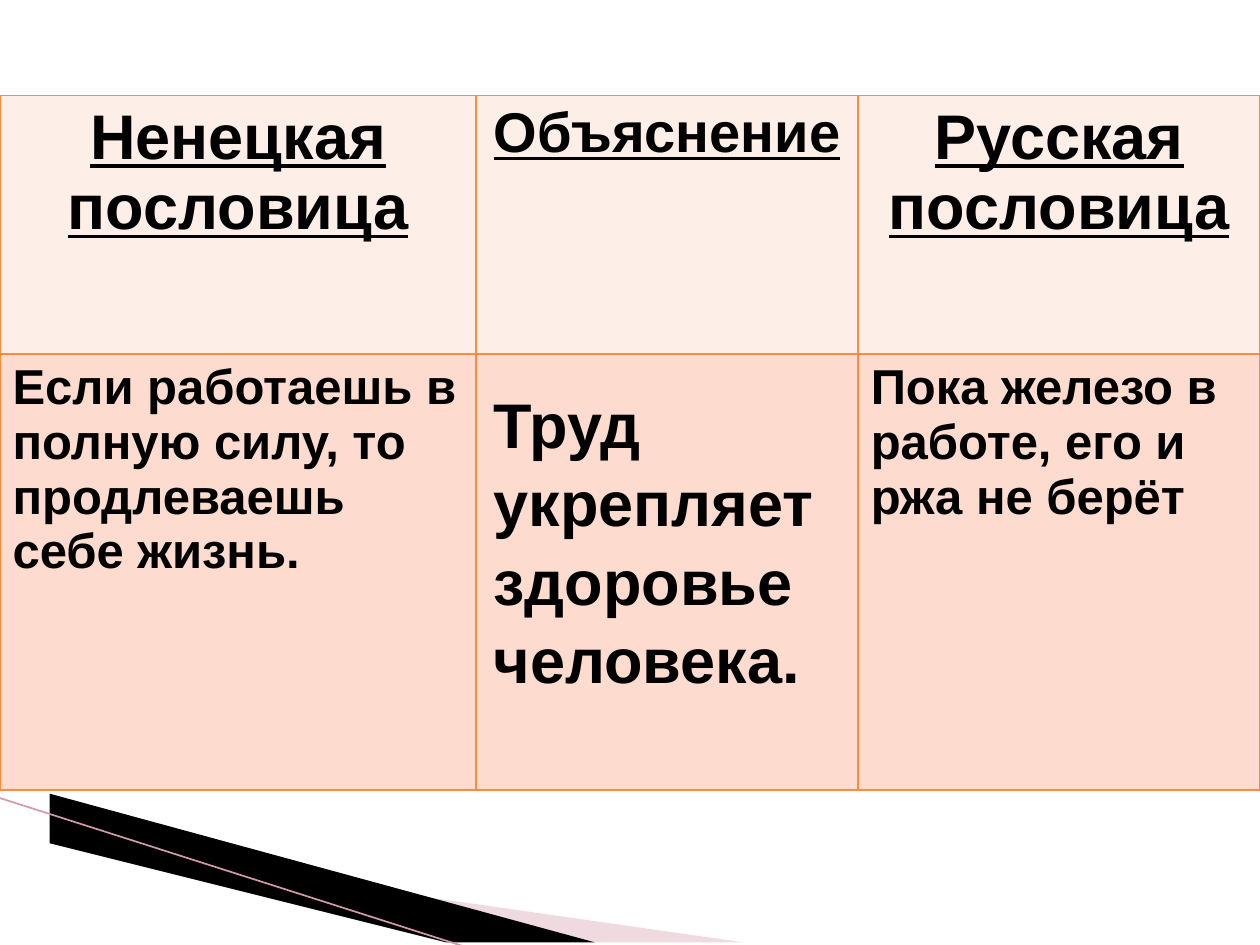
from lxml import etree
from pptx import Presentation
from pptx.dml.color import RGBColor
from pptx.enum.shapes import MSO_CONNECTOR
from pptx.enum.text import PP_ALIGN
from pptx.oxml.ns import qn
from pptx.util import Cm, Pt

CENTER, LEFT = PP_ALIGN.CENTER, PP_ALIGN.LEFT
STRAIGHT = MSO_CONNECTOR.STRAIGHT

COLORS = {
    "text": "000000",
    "header": "FEEEE8",
    "body": "FDDBCE",
    "border": "FA8D3D",
    "pale wedge": "D8A3AF",
    "dark wedge": "000000",
    "edge": "D39AA8",
}

COLUMN_WIDTHS = (9.6, 7.7, 8.1)
ROW_HEIGHTS = (5.21, 8.79)
# Each cell: text, size in points
ROWS = (
    (("Ненецкая пословица", 36), ("Объяснение", 32), ("Русская пословица", 36)),
    (("Если работаешь в полную силу, то продлеваешь себе жизнь.", 28),
     ("", 28),
     ("Пока железо в работе, его и ржа не берёт", 28)),
)


def color(name):
    return RGBColor.from_string(COLORS[name])


def write(paragraph, text, size, align=LEFT, underline=False):
    paragraph.alignment = align
    run = paragraph.add_run()
    run.text = text
    font_format = {"name": "Arial", "size": Pt(size), "bold": True,
                   "underline": underline}
    for attribute, value in font_format.items():
        setattr(run.font, attribute, value)
    run.font.color.rgb = color("text")


def add_wedge(slide, points, fill, alpha=None):
    start, *others = points
    builder = slide.shapes.build_freeform(*start, scale=Cm(1))
    builder.add_line_segments(others, close=True)
    wedge = builder.convert_to_shape()
    wedge.shadow.inherit = False
    wedge.line.fill.background()
    wedge.fill.solid()
    wedge.fill.fore_color.rgb = color(fill)
    if alpha is not None:
        fill_color = wedge.fill._xPr.find(f".//{qn('a:srgbClr')}")
        etree.SubElement(fill_color, qn("a:alpha"), val=str(alpha * 1000))


def add_edge(slide, start, end):
    edge = slide.shapes.add_connector(STRAIGHT, *map(Cm, start + end))
    edge.line.color.rgb = color("edge")
    edge.line.width = Pt(0.95)
    etree.SubElement(edge._element.spPr, qn("a:effectLst"))


def add_borders(cell):
    properties = cell._tc.get_or_add_tcPr()
    for side in ("lnL", "lnR", "lnT", "lnB"):
        border = etree.SubElement(properties, qn(f"a:{side}"), w=str(Pt(1)))
        fill = etree.SubElement(border, qn("a:solidFill"))
        etree.SubElement(fill, qn("a:srgbClr"), val=COLORS["border"])


def add_proverbs(slide):
    proverbs = slide.shapes.add_table(
        len(ROWS), len(COLUMN_WIDTHS), Cm(0), Cm(1.93),
        Cm(sum(COLUMN_WIDTHS)), Cm(sum(ROW_HEIGHTS))).table
    for column, width in zip(proverbs.columns, COLUMN_WIDTHS):
        column.width = Cm(width)
    for r, (height, entries) in enumerate(zip(ROW_HEIGHTS, ROWS)):
        proverbs.rows[r].height = Cm(height)
        is_header = r == 0
        for c, (text, size) in enumerate(entries):
            cell = proverbs.cell(r, c)
            add_borders(cell)
            cell.fill.solid()
            cell.fill.fore_color.rgb = color("header" if is_header else "body")
            if text:
                write(cell.text_frame.paragraphs[0], text, size,
                      CENTER if is_header else LEFT, is_header)


def add_explanation(slide):
    frame = slide.shapes.add_textbox(
        Cm(9.7), Cm(7.58), Cm(7.01), Cm(6.4)).text_frame
    frame.word_wrap = True
    explanation = frame.paragraphs[0]
    explanation.line_spacing = 1.04
    write(explanation, "Труд укрепляет здоровье человека.", 36)


def main():
    presentation = Presentation()
    presentation.slide_width, presentation.slide_height = Cm(25.4), Cm(19.05)
    slide = presentation.slides.add_slide(presentation.slide_layouts[6])

    # Corner decoration
    add_wedge(slide, ((1.4, 16.54), (15.11, 19.08), (11.58, 19.08), (1.4, 16.51)),
              "pale wedge", alpha=40)
    add_wedge(slide, ((1.35, 16.48), (11.61, 19.08), (9.45, 19.1), (1.37, 16.51)),
              "dark wedge")
    add_edge(slide, (-0.03, 16.08), (9.42, 19.1))

    # Proverbs and their shared meaning
    add_proverbs(slide)
    add_explanation(slide)

    presentation.save("out.pptx")


if __name__ == "__main__":
    main()
